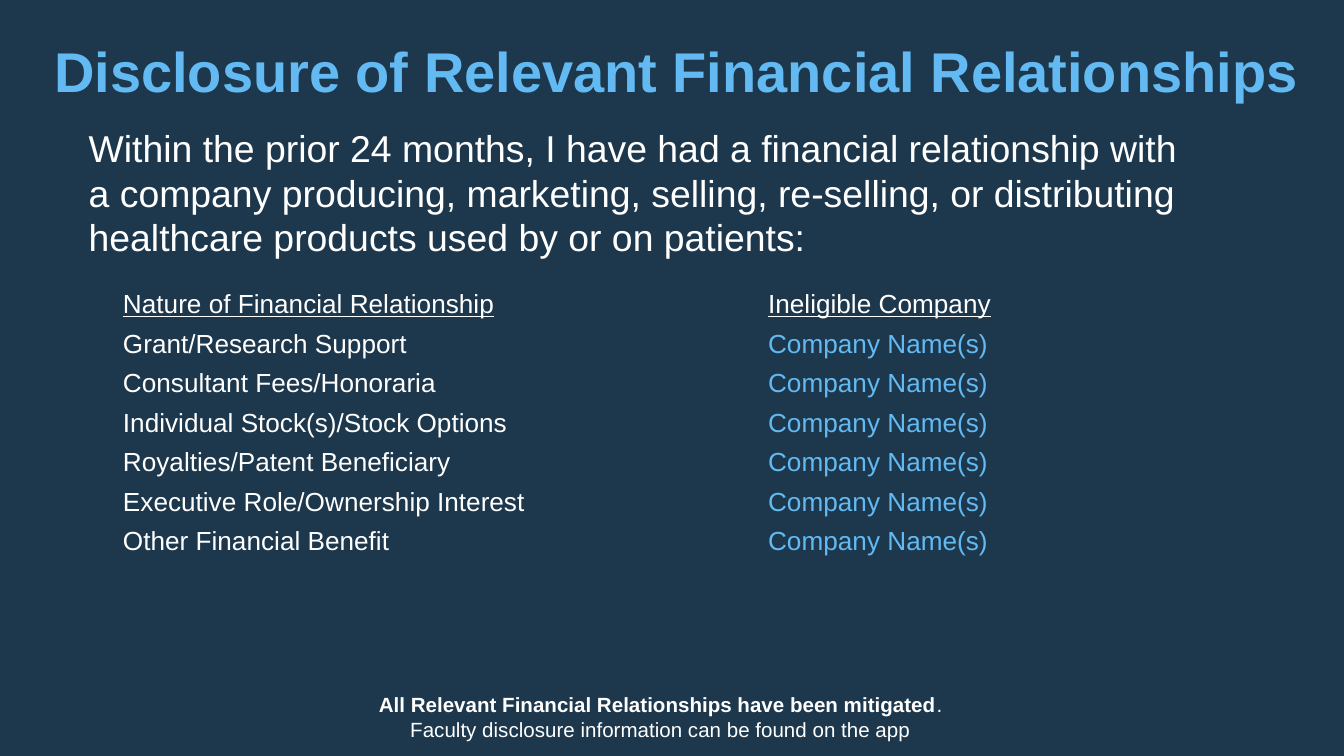
from dataclasses import dataclass

from lxml.etree import SubElement
from pptx import Presentation
from pptx.dml.color import RGBColor
from pptx.enum.text import MSO_ANCHOR, MSO_AUTO_SIZE, PP_ALIGN
from pptx.oxml.ns import qn
from pptx.util import Inches, Pt

NAVY = RGBColor(0x1D, 0x38, 0x4C)
SKY = RGBColor(0x63, 0xBA, 0xF2)
WHITE = RGBColor(0xFF, 0xFF, 0xFF)
NO_GRID = "{2D5ABB26-0587-4C30-8999-92F81FD0307C}"


@dataclass
class Relationship:
    nature: str
    company: str = "Company Name(s)"
    color: RGBColor = SKY
    underline: bool = False
    anchor: MSO_ANCHOR = MSO_ANCHOR.TOP


RELATIONSHIPS = [
    Relationship("Nature of Financial Relationship", "Ineligible Company",
                 WHITE, True, MSO_ANCHOR.BOTTOM),
    Relationship("Grant/Research Support"),
    Relationship("Consultant Fees/Honoraria"),
    Relationship("Individual Stock(s)/Stock Options"),
    Relationship("Royalties/Patent Beneficiary"),
    Relationship("Executive Role/Ownership Interest"),
    Relationship("Other Financial Benefit"),
]


def write(p, text: str, *, size: float, color: RGBColor = WHITE,
          bold: bool = False, underline: bool = False,
          align: PP_ALIGN = PP_ALIGN.LEFT) -> None:
    p.alignment = align
    for i, line in enumerate(text.split("\v")):
        if i:
            p.add_line_break()
        r = p.add_run()
        r.text = line
        font = r.font
        font.name = "Arial"
        font.size = Pt(size)
        font.bold = bold
        font.italic = False
        font.underline = underline
        font.color.rgb = color


def place(sp, left: float, top: float, width: float, height: float) -> None:
    sp.left, sp.top = Inches(left), Inches(top)
    sp.width, sp.height = Inches(width), Inches(height)


def add_title(slide) -> None:
    sp = slide.shapes.title
    place(sp, 0.32, 0.22, 9.43, 0.47)
    tf = sp.text_frame
    tf.auto_size = MSO_AUTO_SIZE.NONE
    tf.vertical_anchor = MSO_ANCHOR.TOP
    tf.margin_left = tf.margin_right = Inches(0.05)
    tf.margin_top = tf.margin_bottom = Inches(0.05)
    write(tf.paragraphs[0], "Disclosure of Relevant Financial Relationships",
          size=30, color=SKY, bold=True, align=PP_ALIGN.CENTER)


def add_statement(slide) -> None:
    sp = slide.placeholders[1]
    place(sp, 0.56, 0.88, 9.02, 1.09)
    tf = sp.text_frame
    tf.auto_size = MSO_AUTO_SIZE.NONE
    p = tf.paragraphs[0]
    pPr = p._p.get_or_add_pPr()
    pPr.set("marL", "0")
    pPr.set("indent", "0")
    SubElement(pPr, qn("a:buNone"))
    p.space_before = Pt(0)
    write(p, "Within the prior 24 months, I have had a financial relationship with \v"
             "a company producing, marketing, selling, re-selling, or distributing "
             "healthcare products used by or on patients:", size=20)


def add_relationships(slide, rows: list[Relationship]) -> None:
    frame = slide.shapes.add_table(len(rows), 2, Inches(0.84), Inches(2.12),
                                   Inches(8.14), Inches(0.25 * len(rows)))
    table = frame.table
    table.first_row = table.horz_banding = False
    table._tbl.tblPr.find(qn("a:tableStyleId")).text = NO_GRID
    for column, width in zip(table.columns, (4.8, 3.34)):
        column.width = Inches(width)
    for i, row in enumerate(rows):
        for j, (text, color) in enumerate(((row.nature, WHITE),
                                           (row.company, row.color))):
            cell = table.cell(i, j)
            cell.fill.background()
            cell.vertical_anchor = row.anchor
            cell.margin_left = cell.margin_right = Pt(5.4)
            cell.margin_top = cell.margin_bottom = Pt(2.7)
            write(cell.text_frame.paragraphs[0], text, size=14, color=color,
                  underline=row.underline)


def add_footer(slide) -> None:
    sp = slide.shapes.add_textbox(Inches(2.71), Inches(5.1),
                                  Inches(4.41), Inches(0.47))
    tf = sp.text_frame
    tf.word_wrap = False
    tf.auto_size = MSO_AUTO_SIZE.SHAPE_TO_FIT_TEXT
    p = tf.paragraphs[0]
    write(p, "All Relevant Financial Relationships have been mitigated",
          size=11, bold=True, align=PP_ALIGN.CENTER)
    write(p, ".", size=11, align=PP_ALIGN.CENTER)
    write(tf.add_paragraph(), "Faculty disclosure information can be found on the app",
          size=11, align=PP_ALIGN.CENTER)


def main() -> None:
    prs = Presentation()
    prs.slide_width = Inches(10)
    prs.slide_height = Inches(10 * 9 / 16)
    slide = prs.slides.add_slide(prs.slide_layouts[1])
    fill = slide.background.fill
    fill.solid()
    fill.fore_color.rgb = NAVY
    add_title(slide)
    add_statement(slide)
    add_relationships(slide, RELATIONSHIPS)
    add_footer(slide)
    prs.save("out.pptx")


if __name__ == "__main__":
    main()
